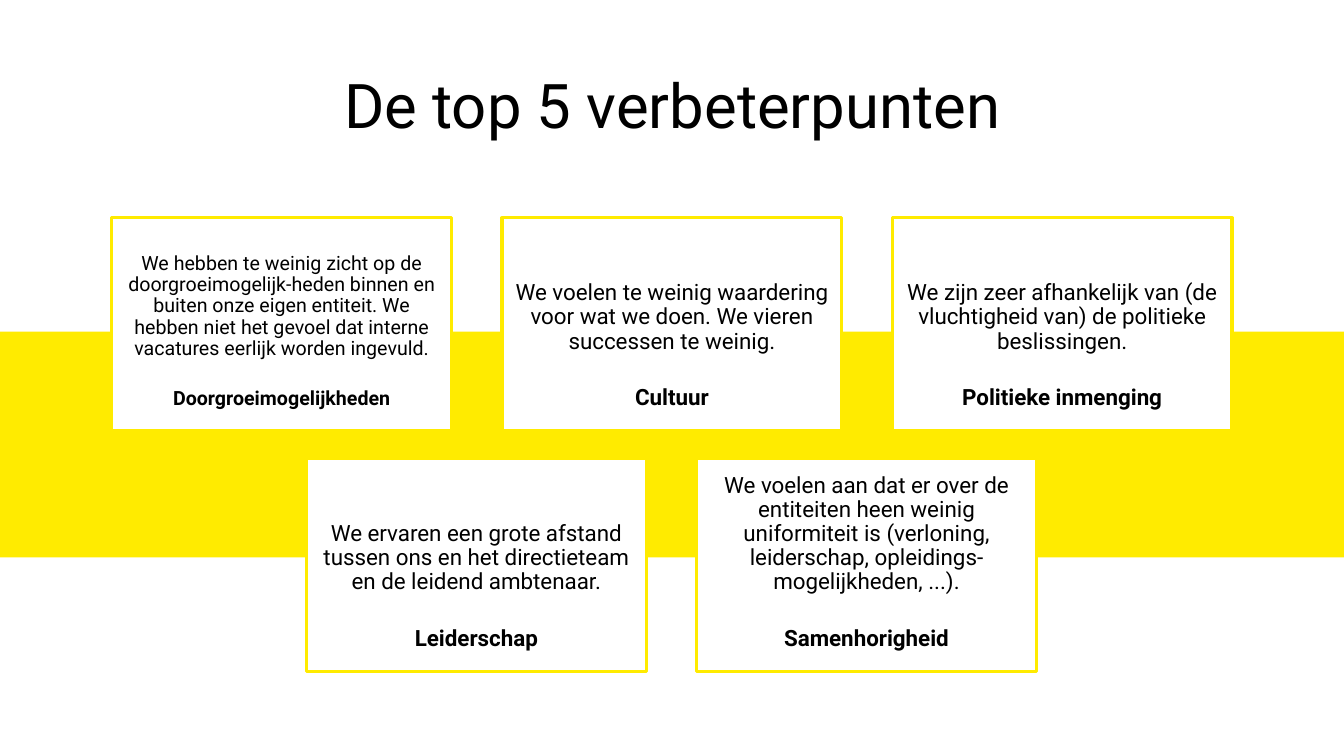
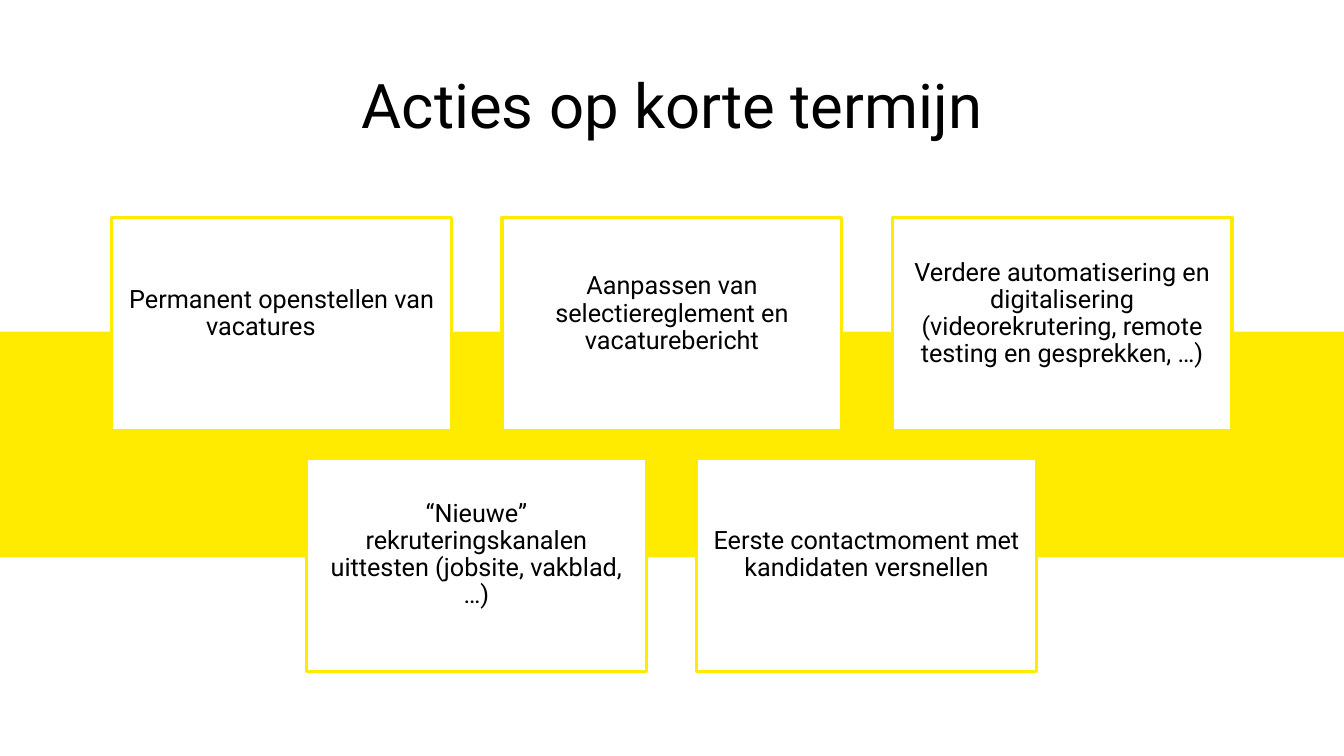
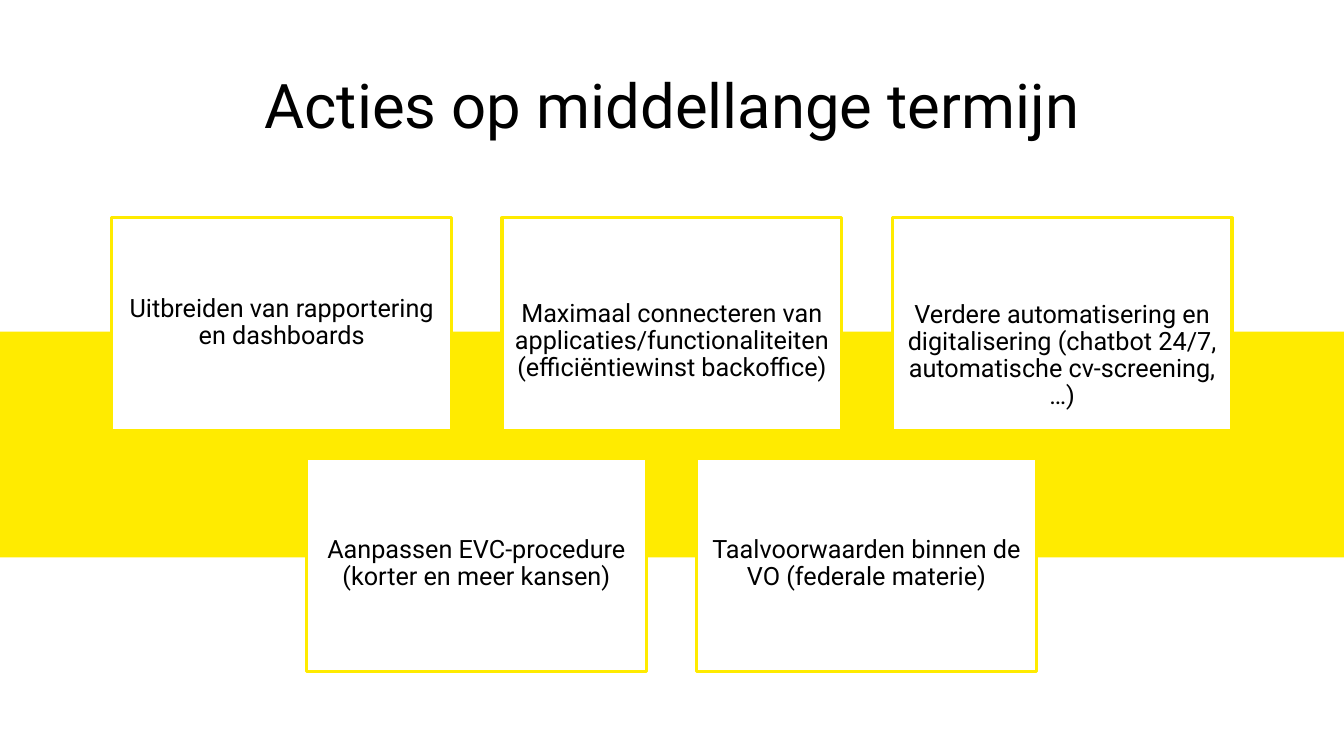
from dataclasses import dataclass

from pptx import Presentation
from pptx.dml.color import RGBColor
from pptx.enum.shapes import MSO_SHAPE
from pptx.enum.text import MSO_ANCHOR, MSO_AUTO_SIZE, PP_ALIGN
from pptx.util import Inches, Pt

RECTANGLE = MSO_SHAPE.RECTANGLE
CENTER = PP_ALIGN.CENTER
MIDDLE, BOTTOM = MSO_ANCHOR.MIDDLE, MSO_ANCHOR.BOTTOM
NO_AUTOFIT = MSO_AUTO_SIZE.NONE
TITLE_ONLY = 5

SLIDE_WIDTH, SLIDE_HEIGHT = 13.33, 7.5
CARD_WIDTH, CARD_HEIGHT = 3.37, 2.11
CARD_STEP = 3.87
CARD_ROWS = ((1.11, 2.16, 3), (3.04, 4.55, 2))  # left, top, number of cards
CARD_PLACES = [(left + column * CARD_STEP, top)
               for left, top, count in CARD_ROWS for column in range(count)]


@dataclass(frozen=True)
class Theme:
    font: str = "Roboto"
    text: RGBColor = RGBColor(0, 0, 0)
    paper: RGBColor = RGBColor(255, 255, 255)
    accent: RGBColor = RGBColor(0xFF, 0xEB, 0x00)
    title_size: int = 44
    title_line: int = 38
    action_size: int = 18
    point_size: int = 16
    small_point_size: int = 14
    card_line: float = 0.9
    card_border: float = 2.25


class Deck:
    def __init__(self, theme):
        self.theme = theme
        self.presentation = Presentation()
        self.presentation.slide_width = Inches(SLIDE_WIDTH)
        self.presentation.slide_height = Inches(SLIDE_HEIGHT)
        self.slide = None

    def add_slide(self, title):
        layout = self.presentation.slide_layouts[TITLE_ONLY]
        self.slide = self.presentation.slides.add_slide(layout)
        self.format_title(title)
        self.add_band()

    def format_title(self, text):
        title = self.slide.shapes.title
        title.left, title.top = Inches(0.41), Inches(0.47)
        title.width, title.height = Inches(12.52), Inches(1.33)
        frame = self.set_frame(title, MIDDLE, 0, 0)
        paragraph = frame.paragraphs[0]
        self.set_paragraph(paragraph, text, self.theme.title_size)
        paragraph.line_spacing = Pt(self.theme.title_line)

    def add_band(self):
        """Draw the yellow band behind everything else on the slide."""
        band = self.add_rectangle(0, 3.29, SLIDE_WIDTH, 2.24, self.theme.accent)
        band.line.fill.background()
        self.slide.shapes.title.element.addprevious(band.element)

    def add_rectangle(self, left, top, width, height, color):
        shape = self.slide.shapes.add_shape(
            RECTANGLE, Inches(left), Inches(top), Inches(width), Inches(height))
        shape.shadow.inherit = False
        shape.fill.solid()
        shape.fill.fore_color.rgb = color
        return shape

    def set_frame(self, shape, anchor, side, bottom):
        frame = shape.text_frame
        frame.word_wrap = True
        frame.auto_size = NO_AUTOFIT
        frame.vertical_anchor = anchor
        frame.margin_left = frame.margin_right = Inches(side)
        frame.margin_top, frame.margin_bottom = 0, Inches(bottom)
        return frame

    def set_paragraph(self, paragraph, text, size, bold=False):
        paragraph.text = text
        paragraph.alignment = CENTER
        paragraph.line_spacing = self.theme.card_line
        font = paragraph.font
        font.name, font.size, font.bold = self.theme.font, Pt(size), bold
        font.color.rgb = self.theme.text

    def add_card(self, place, text, size, anchor=BOTTOM, label=None, lift=0):
        """Add a bordered card; lift raises its text above the bottom margin."""
        card = self.add_rectangle(*place, CARD_WIDTH, CARD_HEIGHT, self.theme.paper)
        card.line.color.rgb = self.theme.accent
        card.line.width = Pt(self.theme.card_border)
        frame = self.set_frame(card, anchor, 0.12, 0.2 + lift)
        self.set_paragraph(frame.paragraphs[0], text, size)
        if label:
            paragraph = frame.add_paragraph()
            self.set_paragraph(paragraph, label, size, bold=True)
            paragraph.space_before = Pt(size + 7)


def main():
    theme = Theme()
    deck = Deck(theme)

    deck.add_slide("De top 5 verbeterpunten")
    improvements = [
        ("Doorgroeimogelijkheden", theme.small_point_size,
         "We hebben te weinig zicht op de doorgroeimogelijk-heden binnen en buiten "
         "onze eigen entiteit. We hebben niet het gevoel dat interne vacatures "
         "eerlijk worden ingevuld."),
        ("Cultuur", theme.point_size,
         "We voelen te weinig waardering voor wat we doen. We vieren successen "
         "te weinig."),
        ("Politieke inmenging", theme.point_size,
         "We zijn zeer afhankelijk van (de vluchtigheid van) de politieke "
         "beslissingen."),
        ("Leiderschap", theme.point_size,
         "We ervaren een grote afstand tussen ons en het directieteam en de "
         "leidend ambtenaar."),
        ("Samenhorigheid", theme.point_size,
         "We voelen aan dat er over de entiteiten heen weinig uniformiteit is "
         "(verloning, leiderschap, opleidings-mogelijkheden, ...)."),
    ]
    for place, (label, size, text) in zip(CARD_PLACES, improvements):
        deck.add_card(place, text, size, label=label)

    deck.add_slide("Acties op korte termijn")
    short_term_actions = [
        "Permanent openstellen van vacatures\t",
        "Aanpassen van selectiereglement en vacaturebericht",
        "Verdere automatisering en digitalisering (videorekrutering, remote "
        "testing en gesprekken, …)",
        "“Nieuwe” rekruteringskanalen uittesten (jobsite, vakblad, …)",
        "Eerste contactmoment met kandidaten versnellen",
    ]
    for place, text in zip(CARD_PLACES, short_term_actions):
        deck.add_card(place, text, theme.action_size, anchor=MIDDLE)

    deck.add_slide("Acties op middellange termijn")
    medium_term_actions = [
        ("Uitbreiden van rapportering en dashboards", 0.6),
        ("Maximaal connecteren van applicaties/functionaliteiten "
         "(efficiëntiewinst backoffice)", 0.28),
        ("Verdere automatisering en digitalisering (chatbot 24/7, automatische "
         "cv-screening, …)", 0),
        ("Aanpassen EVC-procedure (korter en meer kansen)", 0.6),
        ("Taalvoorwaarden binnen de VO (federale materie)", 0.6),
    ]
    for place, (text, lift) in zip(CARD_PLACES, medium_term_actions):
        deck.add_card(place, text, theme.action_size, lift=lift)

    deck.presentation.save("out.pptx")


if __name__ == "__main__":
    main()
